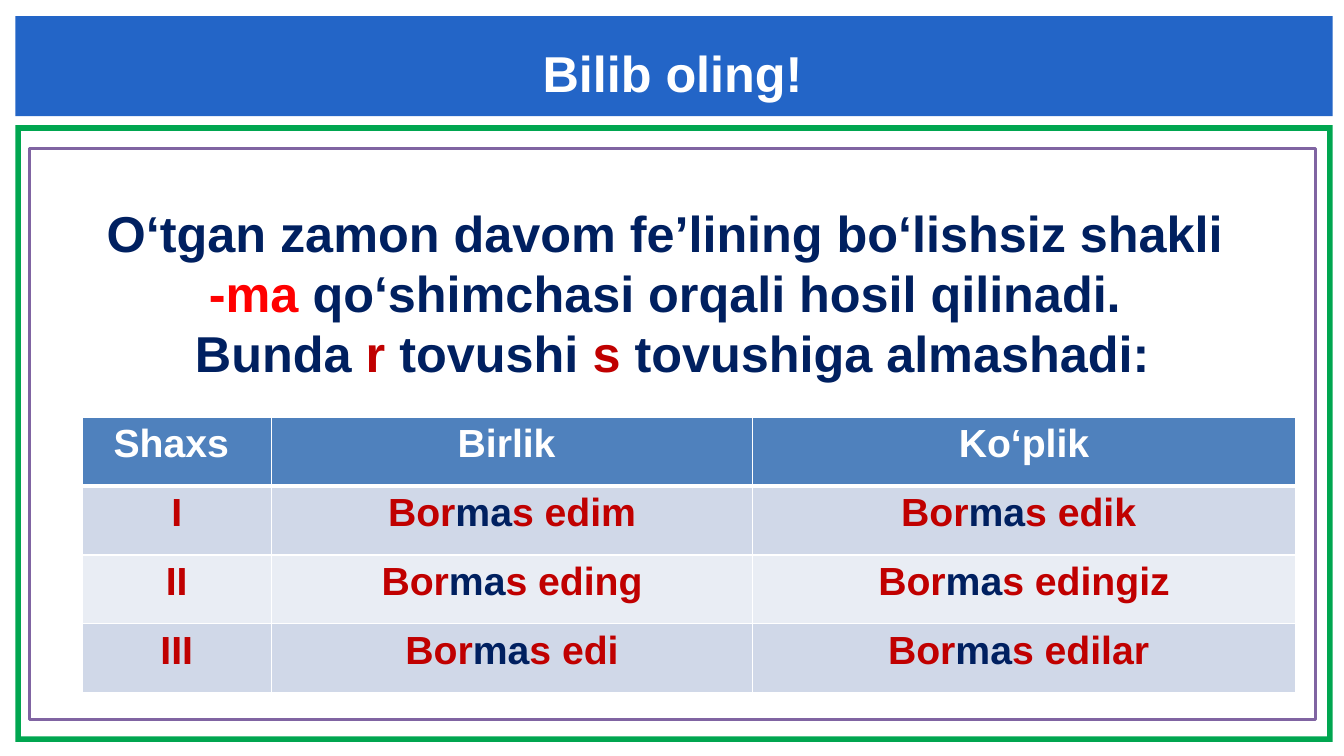
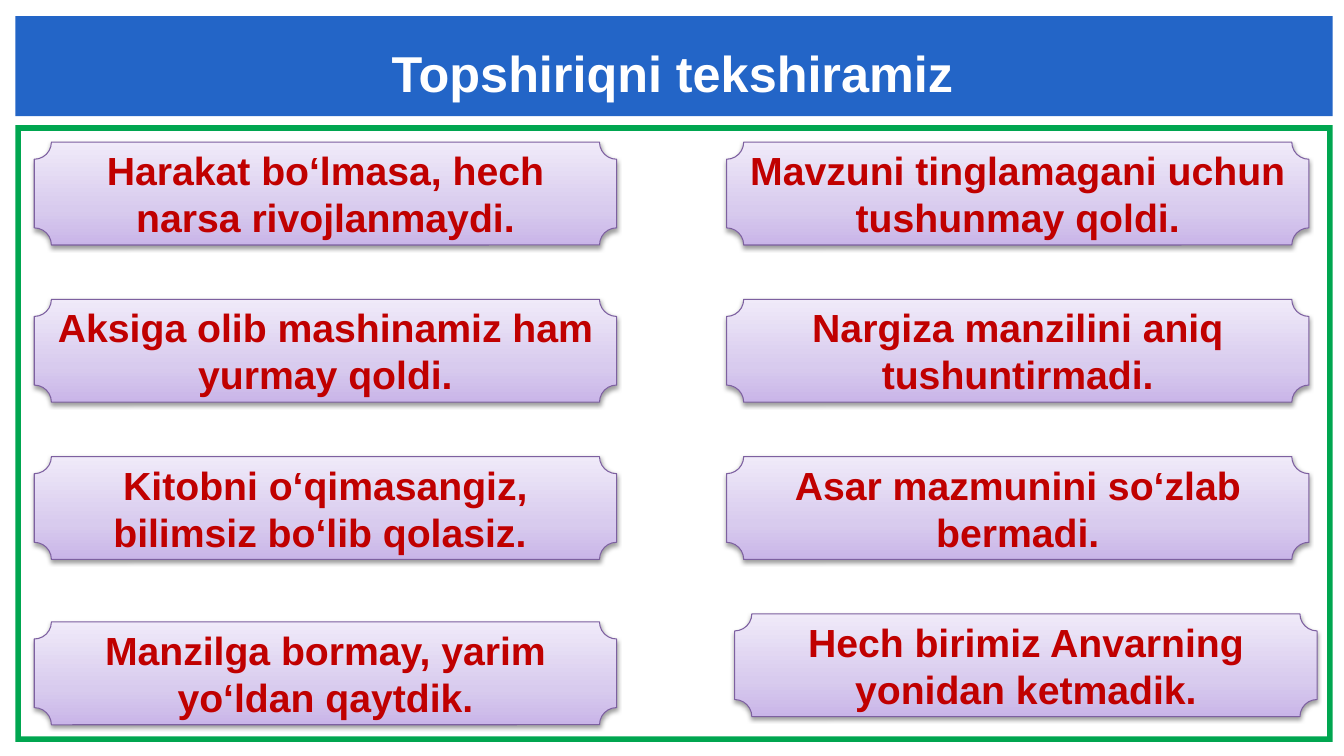
from copy import deepcopy
from dataclasses import dataclass

from lxml import etree
from pptx import Presentation
from pptx.dml.color import RGBColor
from pptx.enum import shapes, text
from pptx.oxml.ns import qn
from pptx.util import Pt

FONT = "Arial"
COLORS = {
    "white": "FFFFFF", "black": "000000", "band": "2365C7", "frame": "00A650",
    "navy": "002060", "red": "FF0000", "dark_red": "C00000",
    "panel_line": "8064A2", "plaque_line": "7D60A0",
    "header": "4F81BD", "row_dark": "D0D8E8", "row_light": "E9EDF4",
}
PLAQUE_STOPS = [(0, "C9B5E8"), (0.35, "D8CBEE"), (1, "F0EAF9")]


@dataclass
class Box:
    x: float
    y: float
    w: float
    h: float

    def lengths(self) -> list:
        return [Pt(v) for v in (self.x, self.y, self.w, self.h)]


@dataclass
class Span:
    text: str
    color: str = "navy"


@dataclass
class Plaque:
    text: str
    col: int
    row: int
    dx: float = 0
    dy: float = 0


BAND = Box(11, 11.5, 941, 71.5)
FRAME = Box(11, 89.5, 941, 440.5)
FRAME_WIDTH = 4
TITLE = Box(61, 26, 839, 51)
PANEL = Box(21, 106, 918.5, 408)
TABLE = Box(58.5, 298, 867, 196.8)
TABLE_COLS = [135.5, 343.5, 388]
FIRST_PLAQUE = Box(24.5, 101.5, 416, 73.5)
COL_STEP, ROW_STEP = 494.5, 112.3

RULE = [
    [Span("O‘tgan zamon davom fe’lining bo‘lishsiz shakli ")],
    [Span("-ma ", "red"), Span("qo‘shimchasi orqali hosil qilinadi. ")],
    [Span("Bunda "), Span("r ", "dark_red"), Span("tovushi "),
     Span("s ", "dark_red"), Span("tovushiga almashadi:")],
]
HEADINGS = ["Shaxs ", "Birlik ", "Ko‘plik"]
ENDINGS = [
    ("I", "s edim", "s edik "),
    ("II", "s eding", "s edingiz"),
    ("III", "s edi", "s edilar "),
]
PLAQUES = [
    Plaque("Harakat bo‘lmasa, hech narsa rivojlanmaydi.", 0, 0),
    Plaque("Aksiga olib mashinamiz ham yurmay qoldi.", 0, 1),
    Plaque("Kitobni o‘qimasangiz, bilimsiz bo‘lib qolasiz. ", 0, 2),
    Plaque("Manzilga bormay, yarim yo‘ldan qaytdik.", 0, 3, dy=5.8),
    Plaque("Mavzuni tinglamagani uchun tushunmay qoldi.", 1, 0),
    Plaque("Nargiza manzilini aniq tushuntirmadi.", 1, 1),
    Plaque("Asar mazmunini so‘zlab bermadi.", 1, 2),
    Plaque("Hech birimiz Anvarning yonidan ketmadik.", 1, 3, dx=5.8),
]


def rgb(name: str) -> RGBColor:
    return RGBColor.from_string(COLORS[name])


def write(tf, lines: list, size: float) -> None:
    """Write centred bold paragraphs, each a list of spans."""
    for i, spans in enumerate(lines):
        p = tf.paragraphs[0] if i == 0 else tf.add_paragraph()
        p.alignment = text.PP_ALIGN.CENTER
        for span in spans:
            r = p.add_run()
            r.text = span.text
            r.font.name, r.font.size, r.font.bold = FONT, Pt(size), True
            r.font.color.rgb = rgb(span.color)


def add_shape(s, kind, box: Box, fill: str, line: str = "", width: float = 0):
    sp = s.shapes.add_shape(kind, *box.lengths())
    sp.shadow.inherit = False
    sp.fill.solid()
    sp.fill.fore_color.rgb = rgb(fill)
    if line:
        sp.line.color.rgb = rgb(line)
        sp.line.width = Pt(width)
    else:
        sp.line.fill.background()
    return sp


def add_backdrop(s) -> None:
    """Draw the band and frame, and move them to the slide's layout."""
    frame = add_shape(s, shapes.MSO_SHAPE.FRAME, FRAME, "frame")
    frame.adjustments[0] = FRAME_WIDTH / FRAME.h
    band = add_shape(s, shapes.MSO_SHAPE.RECTANGLE, BAND, "band")
    for sp in (frame, band):
        s.slide_layout.shapes.element.append(sp.element)


def set_title(s, title: str) -> None:
    sp = s.shapes.title
    sp.left, sp.top, sp.width, sp.height = TITLE.lengths()
    tf = sp.text_frame
    tf.margin_left = tf.margin_top = tf.margin_right = tf.margin_bottom = 0
    tf.vertical_anchor = text.MSO_ANCHOR.MIDDLE
    write(tf, [[Span(title, "white")]], 36)


def set_borders(cell, bottom: float) -> None:
    tc_pr = cell._tc.get_or_add_tcPr()
    for i, (side, width) in enumerate(
            [("lnL", 1), ("lnR", 1), ("lnT", 1), ("lnB", bottom)]):
        ln = etree.Element(qn(f"a:{side}"), w=str(Pt(width)))
        fill = etree.SubElement(ln, qn("a:solidFill"))
        etree.SubElement(fill, qn("a:srgbClr"), val=COLORS["white"])
        tc_pr.insert(i, ln)


def add_verb_table(s) -> None:
    rows = [[[Span(h, "white")] for h in HEADINGS]]
    for person, *endings in ENDINGS:
        rows.append([[Span(person, "dark_red")]] + [
            [Span("Bor", "dark_red"), Span("ma"), Span(e, "dark_red")]
            for e in endings])
    fills = ["header", "row_dark", "row_light", "row_dark"]
    tbl = s.shapes.add_table(len(rows), len(HEADINGS), *TABLE.lengths()).table
    tbl.first_row = tbl.horz_banding = False
    for col, width in zip(tbl.columns, TABLE_COLS):
        col.width = Pt(width)
    for i, (row, fill) in enumerate(zip(rows, fills)):
        tbl.rows[i].height = Pt(TABLE.h / len(rows))
        for j, spans in enumerate(row):
            cell = tbl.cell(i, j)
            cell.fill.solid()
            cell.fill.fore_color.rgb = rgb(fill)
            set_borders(cell, 3 if i == 0 else 1)
            write(cell.text_frame, [spans], 28)


def add_plaque(s, item: Plaque) -> None:
    first = FIRST_PLAQUE
    box = Box(first.x + item.col * COL_STEP + item.dx,
              first.y + item.row * ROW_STEP + item.dy, first.w, first.h)
    sp = add_shape(s, shapes.MSO_SHAPE.PLAQUE, box, "white", "plaque_line", 0.75)

    # Three-stop gradient, dark at the bottom
    sp.fill.gradient()
    sp.fill.gradient_angle = 90
    stops = sp.element.spPr.find(".//" + qn("a:gsLst"))
    stops.insert(1, deepcopy(stops[0]))
    for stop, (position, color) in zip(sp.fill.gradient_stops, PLAQUE_STOPS):
        stop.position = position
        stop.color.rgb = RGBColor.from_string(color)

    # Soft shadow below
    effects = sp.element.spPr.find(qn("a:effectLst"))
    shadow = etree.SubElement(
        effects, qn("a:outerShdw"), blurRad=str(Pt(3.1)), dist=str(Pt(1.6)),
        dir="5400000", rotWithShape="0")
    color = etree.SubElement(shadow, qn("a:srgbClr"), val=COLORS["black"])
    etree.SubElement(color, qn("a:alpha"), val="38000")

    write(sp.text_frame, [[Span(item.text, "dark_red")]], 28)


def main() -> None:
    prs = Presentation()
    prs.slide_width, prs.slide_height = Pt(960), Pt(540)
    layout = prs.slide_layouts[5]

    # Rule and verb forms
    s = prs.slides.add_slide(layout)
    add_backdrop(s)
    set_title(s, "Bilib oling!")
    panel = add_shape(s, shapes.MSO_SHAPE.RECTANGLE, PANEL,
                      "white", "panel_line", 2)
    tf = panel.text_frame
    tf.vertical_anchor = text.MSO_ANCHOR.TOP
    tf.margin_top = Pt(38)
    write(tf, RULE, 36)
    add_verb_table(s)

    # Answers to the exercise
    s = prs.slides.add_slide(layout)
    set_title(s, "Topshiriqni tekshiramiz")
    for item in PLAQUES:
        add_plaque(s, item)

    prs.save("out.pptx")


if __name__ == "__main__":
    main()
